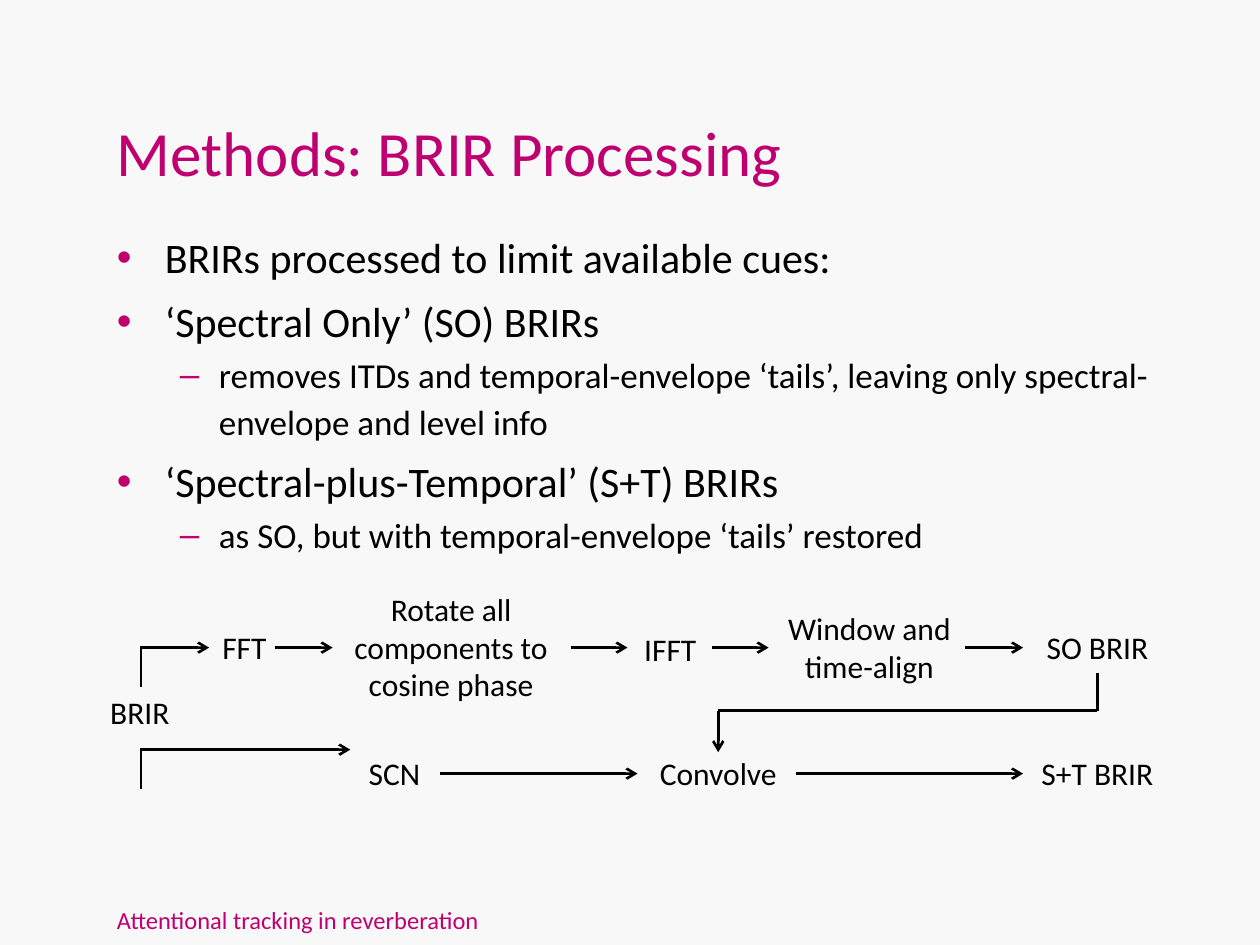
import pptx
import pptx.util
import pptx.dml.color
import pptx.enum.shapes
import pptx.enum.text
from lxml import etree
from pptx.oxml.ns import qn

MAGENTA = pptx.dml.color.RGBColor(0xBF, 0x00, 0x71)
BLACK = pptx.dml.color.RGBColor(0, 0, 0)
PAPER = pptx.dml.color.RGBColor(0xF8, 0xF8, 0xF8)
FONT = "Calibri"
MARGIN = 0.83
LINE_H = 0.305
TOP_ROW, MID_ROW, LOW_ROW = 5.14, 5.64, 6.14
FORK_X, CONVOLVE_X, RESULT_X = 1.12, 5.7, 8.71

# level: size, left margin, hanging indent, space before, bullet
LEVELS = [(24, 0.38, 0.38, 5, "•"), (20, 0.81, 0.31, 2, "–")]
BULLETS = [
    (0, "BRIRs processed to limit available cues:"),
    (0, "‘Spectral Only’ (SO) BRIRs"),
    (1, "removes ITDs and temporal-envelope ‘tails’, leaving only "
        "spectral-envelope and level info"),
    (0, "‘Spectral-plus-Temporal’ (S+T) BRIRs"),
    (1, "as SO, but with temporal-envelope ‘tails’ restored"),
]
# text, centre x, centre y, width, lines
LABELS = [
    ("BRIR", 1.11, MID_ROW + 0.01, 0.71, 1),
    ("FFT", 1.94, TOP_ROW, 0.55, 1),
    ("Rotate all components to cosine phase", 3.58, TOP_ROW, 1.89, 3),
    ("IFFT", 5.32, TOP_ROW + 0.01, 0.64, 1),
    ("Window and time-align", 6.9, TOP_ROW, 1.59, 2),
    ("SO BRIR", RESULT_X, TOP_ROW, 1.18, 1),
    ("SCN", 3.13, LOW_ROW, 0.71, 1),
    ("Convolve", CONVOLVE_X, LOW_ROW, 1.25, 1),
    ("S+T BRIR", RESULT_X, LOW_ROW, 1.34, 1),
]
# row, from x, to x
ARROWS = [
    (TOP_ROW, FORK_X, 1.66), (TOP_ROW, 2.18, 2.64), (TOP_ROW, 4.53, 4.98),
    (TOP_ROW, 5.65, 6.1), (TOP_ROW, 7.66, 8.12),
    (LOW_ROW - 0.19, FORK_X, 2.78), (LOW_ROW, 3.49, 5.06), (LOW_ROW, 6.32, 8.12),
]


def add_run(p, text, size, color):
    r = p.add_run()
    r.text = text
    r.font.name = FONT
    r.font.size = pptx.util.Pt(size)
    r.font.color.rgb = color


def add_box(s, x, y, w, h, wrap=True):
    tf = s.shapes.add_textbox(*map(pptx.util.Inches, (x, y, w, h))).text_frame
    tf.word_wrap = wrap
    return tf


def add_bullet(p, level):
    """Set the hanging indent and the coloured bullet of a level."""
    _, left, hang, _, char = LEVELS[level]
    pPr = p._p.get_or_add_pPr()
    pPr.set("marL", str(pptx.util.Inches(left)))
    pPr.set("indent", str(-pptx.util.Inches(hang)))
    bu_clr = etree.SubElement(pPr, qn("a:buClr"))
    etree.SubElement(bu_clr, qn("a:srgbClr"), val=str(MAGENTA))
    etree.SubElement(pPr, qn("a:buFont"), typeface="Arial")
    etree.SubElement(pPr, qn("a:buChar"), char=char)


def add_body(s):
    tf = add_box(s, MARGIN, 1.75, 8.67, 2.8)
    for i, (level, text) in enumerate(BULLETS):
        p = tf.add_paragraph() if i else tf.paragraphs[0]
        p.level = level
        add_bullet(p, level)
        p.line_spacing = 1.1
        p.space_before = pptx.util.Pt(LEVELS[level][3] if i else 0)
        add_run(p, text, LEVELS[level][0], BLACK)


def add_label(s, text, cx, cy, w, lines):
    h = 0.1 + lines * LINE_H
    tf = add_box(s, cx - w / 2, cy - h / 2, w, h, wrap=lines > 1)
    p = tf.paragraphs[0]
    p.alignment = pptx.enum.text.PP_ALIGN.CENTER
    add_run(p, text, 18, BLACK)


def add_line(s, x1, y1, x2, y2, arrow=False):
    c = s.shapes.add_connector(pptx.enum.shapes.MSO_CONNECTOR.STRAIGHT,
                               *map(pptx.util.Inches, (x1, y1, x2, y2)))
    c.line.color.rgb = BLACK
    c.line.width = pptx.util.Pt(1.5)
    if arrow:
        etree.SubElement(c.line._get_or_add_ln(), qn("a:tailEnd"), type="arrow")
    etree.SubElement(c._element.spPr, qn("a:effectLst"))


def add_flow(s):
    for label in LABELS:
        add_label(s, *label)
    for y, x1, x2 in ARROWS:
        add_line(s, x1, y, x2, y, arrow=True)
    for y in (TOP_ROW, LOW_ROW - 0.19):
        add_line(s, FORK_X, y + 0.31, FORK_X, y - 0.01)
    add_line(s, RESULT_X, 5.34, RESULT_X, MID_ROW)
    add_line(s, CONVOLVE_X, MID_ROW, RESULT_X, MID_ROW)
    add_line(s, CONVOLVE_X, MID_ROW, CONVOLVE_X, 5.97, arrow=True)


def main():
    prs = pptx.Presentation()
    prs.slide_width = pptx.util.Inches(10)
    prs.slide_height = pptx.util.Inches(7.5)
    s = prs.slides.add_slide(prs.slide_layouts[6])
    s.background.fill.solid()
    s.background.fill.fore_color.rgb = PAPER

    footer = add_box(s, MARGIN, 7.13, 6.93, 0.35)
    add_run(footer.paragraphs[0], "Attentional tracking in reverberation", 14, MAGENTA)
    title = add_box(s, MARGIN, 0.3, 6.77, 1.25)
    title.vertical_anchor = pptx.enum.text.MSO_ANCHOR.BOTTOM
    add_run(title.paragraphs[0], "Methods: BRIR Processing", 36, MAGENTA)
    add_body(s)
    add_flow(s)
    prs.save("out.pptx")


if __name__ == "__main__":
    main()
